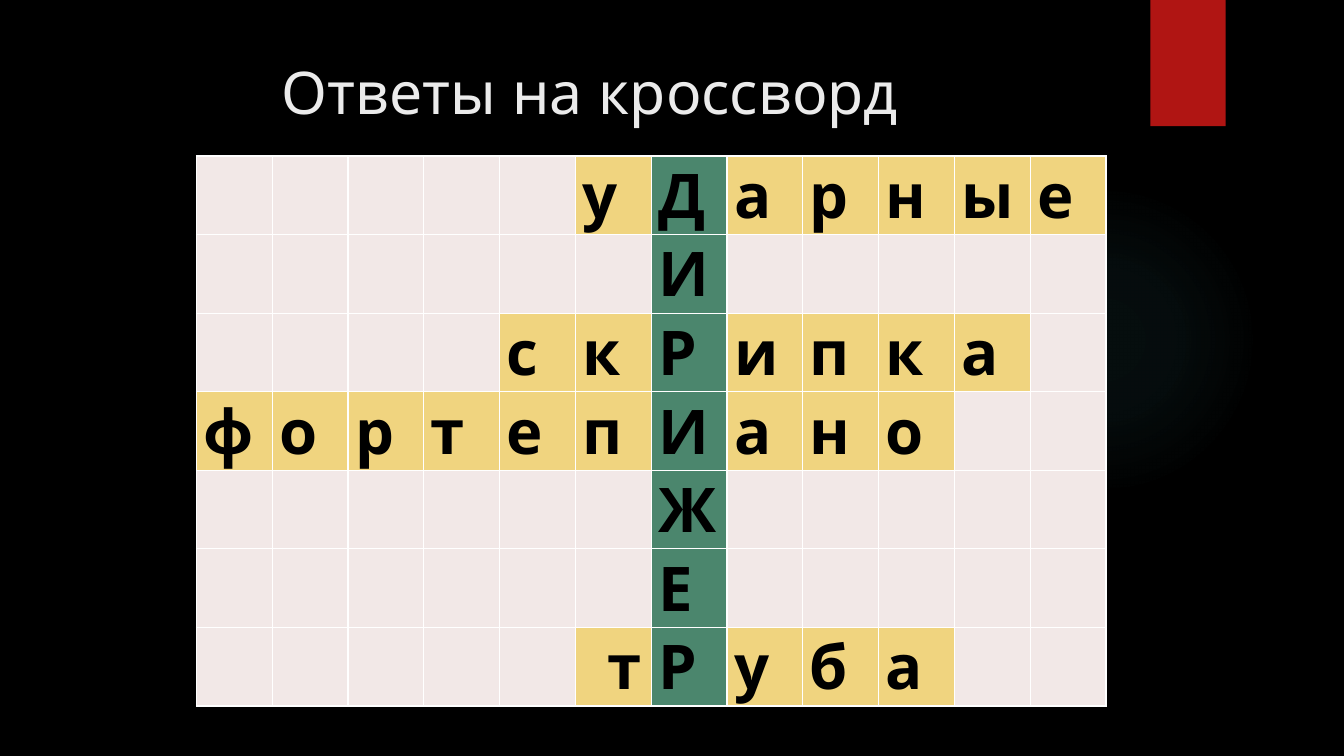
"""Build the crossword answers slide."""
from lxml.etree import SubElement
from pptx import Presentation
from pptx.dml.color import RGBColor
from pptx.enum.shapes import MSO_SHAPE
from pptx.enum.text import MSO_ANCHOR, MSO_AUTO_SIZE, PP_ALIGN
from pptx.oxml import parse_xml
from pptx.oxml.ns import nsdecls, qn
from pptx.util import Cm, Pt

FONT = "Quicksand"
BLACK = RGBColor(0x00, 0x00, 0x00)
WHITE = RGBColor(0xFF, 0xFF, 0xFF)
TITLE_COLOR = RGBColor(0xEB, 0xEB, 0xEB)
RED = RGBColor(0xB0, 0x15, 0x13)
TEAL = RGBColor(0x50, 0xB9, 0xC1)
EMPTY = RGBColor(0xF2, 0xE8, 0xE7)
YELLOW = RGBColor(0xF0, 0xD4, 0x7F)
GREEN = RGBColor(0x4B, 0x86, 0x6D)

COLUMNS = 12
KEY_COLUMN = 6
COLUMN_WIDTH = Cm(1.91)
ROW_HEIGHT = Cm(1.98)
ANSWERS = [
    (5, "уДарные"),
    (6, "И"),
    (4, "скРипка"),
    (0, "фортепИано"),
    (6, "Ж"),
    (6, "Е"),
    (5, "тРуба"),
]
INDENTED_CELL = (6, 5)
GLOW_STOPS = [(0, 7), (36, 6), (69, 0)]


def add_run(paragraph, text, size, color, bold=False):
    run = paragraph.add_run()
    run.text = text
    run.font.name = FONT
    run.font.size = Pt(size)
    run.font.bold = bold
    run.font.color.rgb = color


def add_plain_shape(slide, kind, left, top, width, height):
    shape = slide.shapes.add_shape(kind, left, top, width, height)
    shape.shadow.inherit = False
    shape.line.fill.background()
    return shape


def add_glow(slide):
    glow = add_plain_shape(slide, MSO_SHAPE.OVAL, Cm(23.9), Cm(4.65), Cm(7.82), Cm(7.82))
    stops = "".join(
        f'<a:gs pos="{position * 1000}"><a:srgbClr val="{TEAL}">'
        f'<a:alpha val="{alpha * 1000}"/></a:srgbClr></a:gs>'
        for position, alpha in GLOW_STOPS
    )
    gradient = parse_xml(
        f'<a:gradFill {nsdecls("a")}><a:gsLst>{stops}</a:gsLst><a:path path="circle">'
        '<a:fillToRect l="50000" t="50000" r="50000" b="50000"/></a:path></a:gradFill>'
    )
    glow.element.spPr.find(qn("a:prstGeom")).addnext(gradient)


def add_red_tab(slide):
    tab = add_plain_shape(slide, MSO_SHAPE.RECTANGLE, Cm(28.99), Cm(0), Cm(1.9), Cm(3.18))
    tab.fill.solid()
    tab.fill.fore_color.rgb = RED


def set_title(slide, text):
    title = slide.shapes.title
    title.left, title.top, title.width, title.height = Cm(1.8), Cm(1.27), Cm(26.14), Cm(3.89)
    frame = title.text_frame
    frame.word_wrap = True
    frame.auto_size = MSO_AUTO_SIZE.NONE
    frame.vertical_anchor = MSO_ANCHOR.TOP
    paragraph = frame.paragraphs[0]
    paragraph.alignment = PP_ALIGN.CENTER
    add_run(paragraph, text, 42, TITLE_COLOR)


def format_cell(cell, color):
    properties = cell._tc.get_or_add_tcPr()
    for side in ("a:lnL", "a:lnR", "a:lnT", "a:lnB"):
        line = SubElement(properties, qn(side), w=str(Pt(1)))
        fill = SubElement(line, qn("a:solidFill"))
        SubElement(fill, qn("a:srgbClr"), val=str(WHITE))
    cell.fill.solid()
    cell.fill.fore_color.rgb = color
    cell.vertical_anchor = MSO_ANCHOR.MIDDLE
    cell.margin_left = cell.margin_right = Cm(0.18)
    cell.margin_top = cell.margin_bottom = Cm(0)


def add_crossword(slide):
    rows = len(ANSWERS)
    table = slide.shapes.add_table(
        rows, COLUMNS, Cm(4.95), Cm(3.93), COLUMN_WIDTH * COLUMNS, ROW_HEIGHT * rows
    ).table
    table.first_row = table.horz_banding = False
    for column in table.columns:
        column.width = COLUMN_WIDTH
    for row_index, (start, word) in enumerate(ANSWERS):
        table.rows[row_index].height = ROW_HEIGHT
        letters = dict(enumerate(word, start))
        for column_index in range(COLUMNS):
            cell = table.cell(row_index, column_index)
            if column_index not in letters:
                format_cell(cell, EMPTY)
                continue
            format_cell(cell, GREEN if column_index == KEY_COLUMN else YELLOW)
            paragraph = cell.text_frame.paragraphs[0]
            if (row_index, column_index) == INDENTED_CELL:
                paragraph._p.get_or_add_pPr().set("marL", str(Cm(0.64)))
            add_run(paragraph, letters[column_index], 44, BLACK, bold=True)


def main():
    presentation = Presentation()
    presentation.slide_width, presentation.slide_height = Cm(33.87), Cm(19.05)
    slide = presentation.slides.add_slide(presentation.slide_layouts[5])
    slide.background.fill.solid()
    slide.background.fill.fore_color.rgb = BLACK
    add_glow(slide)
    add_red_tab(slide)
    set_title(slide, "Ответы на кроссворд")
    add_crossword(slide)
    presentation.save("out.pptx")


if __name__ == "__main__":
    main()
